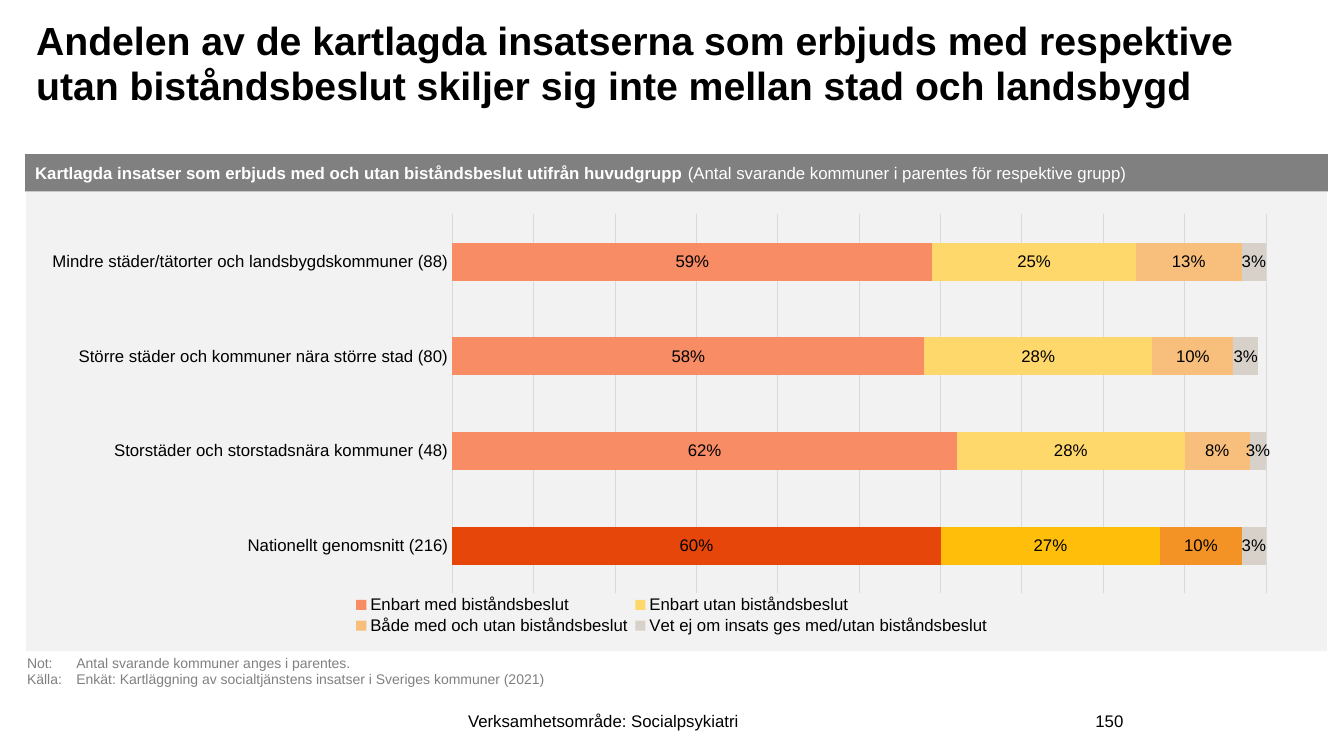
import pptx
import pptx.chart.data
import pptx.dml.color
import pptx.enum.chart
import pptx.enum.shapes
import pptx.enum.text
import pptx.oxml
import pptx.oxml.ns
import pptx.util
from pptx.util import Inches

FONT = "Arial"
BLACK, WHITE, GREY = "000000", "FFFFFF", "808080"
PANEL_GREY, GRID_GREY = "F2F2F2", "D9D9D9"
ALIGN = pptx.enum.text.PP_ALIGN
ANCHOR = pptx.enum.text.MSO_ANCHOR

CATEGORIES = [
    "Mindre städer/tätorter och landsbygdskommuner (88)",
    "Större städer och kommuner nära större stad (80)",
    "Storstäder och storstadsnära kommuner (48)",
    "Nationellt genomsnitt (216)",
]
SERIES = [
    ("Enbart med biståndsbeslut", (0.59, 0.58, 0.62, 0.6), "F88C64", "E6460A"),
    ("Enbart utan biståndsbeslut", (0.25, 0.28, 0.28, 0.27), "FFD86C", "FFBE0A"),
    ("Både med och utan biståndsbeslut", (0.13, 0.1, 0.08, 0.1), "F8BE7C", "F39325"),
    ("Vet ej om insats ges med/utan biståndsbeslut", (0.03, 0.03, 0.03, 0.03), "D7D1CA", None),
]


def color(value):
    return pptx.dml.color.RGBColor.from_string(value)


def set_attributes(target, values):
    for name, value in values.items():
        setattr(target, name, value)


def format_font(font, size, hex_color, bold=False):
    set_attributes(font, {"name": FONT, "size": pptx.util.Pt(size), "bold": bold})
    font.color.rgb = color(hex_color)


def fill_solid(fill, hex_color):
    fill.solid()
    fill.fore_color.rgb = color(hex_color)


def add_panel(slide, box, hex_color):
    shape = slide.shapes.add_shape(
        pptx.enum.shapes.MSO_SHAPE.RECTANGLE, *map(Inches, box)
    )
    shape.shadow.inherit = False
    fill_solid(shape.fill, hex_color)
    shape.line.fill.background()
    return shape


def write_runs(paragraph, runs, size, hex_color):
    for text, bold in runs:
        run = paragraph.add_run()
        run.text = text
        format_font(run.font, size, hex_color, bold)


def add_text(slide, box, lines, size, hex_color=BLACK, bold=False,
             align=ALIGN.LEFT, anchor=ANCHOR.TOP, spacing=1.0, tab=None):
    frame = slide.shapes.add_textbox(*map(Inches, box)).text_frame
    set_attributes(frame, {"word_wrap": True, "vertical_anchor": anchor})
    for index, line in enumerate(lines):
        paragraph = frame.add_paragraph() if index else frame.paragraphs[0]
        set_attributes(paragraph, {"alignment": align, "line_spacing": spacing})
        if tab:
            add_tab_stop(paragraph, tab)
        write_runs(paragraph, [(line, bold)], size, hex_color)


def add_tab_stop(paragraph, position):
    properties = paragraph._p.get_or_add_pPr()
    properties.append(pptx.oxml.parse_xml(
        f'<a:tabLst {pptx.oxml.ns.nsdecls("a")}>'
        f'<a:tab pos="{Inches(position)}" algn="l"/></a:tabLst>'
    ))


def make_layout(box, inner=False):
    target = '<c:layoutTarget val="inner"/>' if inner else ""
    modes = "".join(f'<c:{axis}Mode val="edge"/>' for axis in "xy")
    sizes = "".join(f'<c:{name} val="{value}"/>' for name, value in zip("xywh", box))
    return pptx.oxml.parse_xml(
        f'<c:layout {pptx.oxml.ns.nsdecls("c")}><c:manualLayout>'
        f"{target}{modes}{sizes}</c:manualLayout></c:layout>"
    )


def place_chart_parts(chart, plot_box, legend_box):
    tag = pptx.oxml.ns.qn
    plot_area = chart.element.find(f".//{tag('c:plotArea')}")
    legend = chart.element.find(f".//{tag('c:legend')}")
    for parent in (plot_area, legend):
        for layout in parent.findall(tag("c:layout")):
            parent.remove(layout)
    plot_area.insert(0, make_layout(plot_box, inner=True))
    legend.find(tag("c:legendPos")).addnext(make_layout(legend_box))


def format_line(line, hex_color):
    line.width = pptx.util.Pt(0.75)
    line.color.rgb = color(hex_color)


def format_axes(chart):
    tick_mark = pptx.enum.chart.XL_TICK_MARK
    set_attributes(chart.category_axis, {
        "reverse_order": True,
        "major_tick_mark": tick_mark.NONE,
        "minor_tick_mark": tick_mark.NONE,
        "has_major_gridlines": False,
    })
    format_font(chart.category_axis.tick_labels.font, 12, BLACK)
    format_line(chart.category_axis.format.line, GRID_GREY)
    set_attributes(chart.value_axis, {
        "minimum_scale": 0,
        "maximum_scale": 1,
        "major_unit": 0.1,
        "has_major_gridlines": True,
        "visible": False,
    })
    format_line(chart.value_axis.major_gridlines.format.line, GRID_GREY)


def format_series(series, hex_color, average_color):
    fill_solid(series.format.fill, hex_color)
    if average_color:
        last_point = series.points[len(CATEGORIES) - 1]
        fill_solid(last_point.format.fill, average_color)
    set_attributes(series.data_labels, {
        "show_value": True,
        "number_format": "0%",
        "number_format_is_linked": False,
        "position": pptx.enum.chart.XL_LABEL_POSITION.CENTER,
    })
    format_font(series.data_labels.font, 12, BLACK)


def add_share_chart(slide, box):
    data = pptx.chart.data.CategoryChartData(number_format="0%")
    data.categories = CATEGORIES
    for name, values, _, _ in SERIES:
        data.add_series(name, values)
    chart = slide.shapes.add_chart(
        pptx.enum.chart.XL_CHART_TYPE.BAR_STACKED, *map(Inches, box), data
    ).chart
    set_attributes(chart, {"has_title": False, "has_legend": True})
    format_font(chart.font, 12, BLACK)
    set_attributes(chart.legend, {
        "position": pptx.enum.chart.XL_LEGEND_POSITION.BOTTOM,
        "include_in_layout": False,
    })
    format_font(chart.legend.font, 12, BLACK)
    plot = chart.plots[0]
    set_attributes(plot, {"gap_width": 150, "overlap": 100, "vary_by_categories": False})
    format_axes(chart)
    for series, (_, _, hex_color, average_color) in zip(plot.series, SERIES):
        format_series(series, hex_color, average_color)
    place_chart_parts(chart, (0.33, 0.04, 0.63, 0.85), (0.25, 0.89, 0.5, 0.1))


def add_heading_bar(slide, box):
    bar = add_panel(slide, box, GREY)
    bar.text_frame.word_wrap = True
    bar.text_frame.vertical_anchor = ANCHOR.MIDDLE
    paragraph = bar.text_frame.paragraphs[0]
    paragraph.alignment = ALIGN.LEFT
    write_runs(paragraph, [
        ("Kartlagda insatser som erbjuds med och utan biståndsbeslut utifrån huvudgrupp ", True),
        ("(Antal svarande kommuner i parentes för respektive grupp)", False),
    ], 12, WHITE)


def main():
    presentation = pptx.Presentation()
    set_attributes(presentation, {"slide_width": Inches(13.33), "slide_height": Inches(7.5)})
    slide = presentation.slides.add_slide(presentation.slide_layouts[6])
    add_panel(slide, (0.26, 1.89, 12.9, 4.57), PANEL_GREY)
    add_heading_bar(slide, (0.25, 1.53, 12.92, 0.37))
    add_text(slide, (0.26, 0.15, 12.35, 1.02), [
        "Andelen av de kartlagda insatserna som erbjuds med respektive "
        "utan biståndsbeslut skiljer sig inte mellan stad och landsbygd"
    ], 28, bold=True, spacing=0.95)
    add_share_chart(slide, (0.26, 1.95, 12.81, 4.42))
    add_text(slide, (0.17, 6.44, 12.64, 0.45), [
        "Not:\tAntal svarande kommuner anges i parentes.",
        "Källa:\tEnkät: Kartläggning av socialtjänstens insatser i Sveriges kommuner (2021)",
    ], 10, GREY, tab=0.49)
    add_text(slide, (2.69, 6.95, 6.59, 0.4), ["Verksamhetsområde: Socialpsykiatri"],
             12, align=ALIGN.CENTER, anchor=ANCHOR.MIDDLE)
    add_text(slide, (9.85, 6.95, 1.39, 0.4), ["150"],
             12, align=ALIGN.RIGHT, anchor=ANCHOR.MIDDLE)
    presentation.save("out.pptx")


if __name__ == "__main__":
    main()
